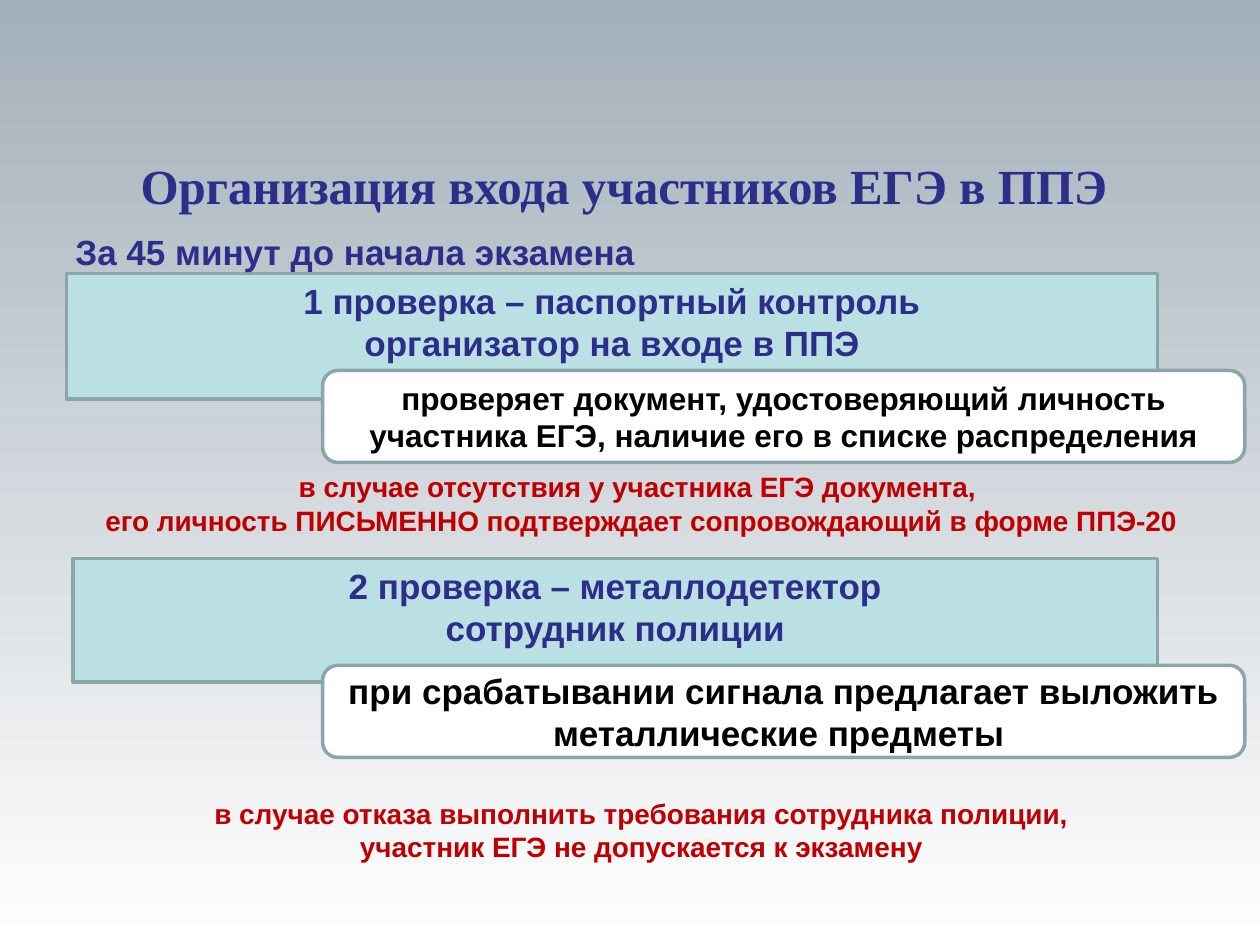
"""Build the slide on admitting exam participants to the test site."""
from typing import NamedTuple, Optional

import pptx
import pptx.dml.color
import pptx.enum.shapes
import pptx.enum.text
import pptx.util

Pt = pptx.util.Pt
Shape = pptx.enum.shapes.MSO_SHAPE
Align = pptx.enum.text.PP_ALIGN
Anchor = pptx.enum.text.MSO_ANCHOR
Fit = pptx.enum.text.MSO_AUTO_SIZE

NAVY, RED, BLACK = "2D2D8A", "C00000", "000000"
WHITE, AQUA, GREY, SLATE = "FFFFFF", "BBE0E3", "8AA6A8", "A3AFB9"


class Label(NamedTuple):
    text: str
    left: float
    top: float
    width: float
    height: float
    size: float
    color: str
    font: str = "Arial"
    align: Align = Align.CENTER
    anchor: Anchor = Anchor.TOP
    pad: float = 3.6
    wrap: bool = True


class Panel(NamedTuple):
    form: Shape
    fill: str
    label: Label


def paint(target, color: str) -> None:
    target.rgb = pptx.dml.color.RGBColor.from_string(color)


def place(label: Label) -> tuple:
    return tuple(Pt(n) for n in (label.left, label.top, label.width, label.height))


def write(shape, label: Label) -> None:
    frame = shape.text_frame
    frame.text = label.text
    frame.word_wrap = label.wrap
    frame.vertical_anchor = label.anchor
    frame.margin_top = frame.margin_bottom = Pt(label.pad)
    if not label.wrap:
        frame.auto_size = Fit.SHAPE_TO_FIT_TEXT
    for para in frame.paragraphs:
        para.alignment = label.align
        for run in para.runs:
            run.font.name = label.font
            run.font.size = Pt(label.size)
            run.font.bold = True
            paint(run.font.color, label.color)


def draw(slide, panel: Panel) -> None:
    shape = slide.shapes.add_shape(panel.form, *place(panel.label))
    shape.shadow.inherit = False
    shape.fill.solid()
    paint(shape.fill.fore_color, panel.fill)
    paint(shape.line.color, GREY)
    shape.line.width = Pt(2)
    write(shape, panel.label)


def check(text: str, left: float, top: float, width: float, height: float) -> Panel:
    return Panel(Shape.RECTANGLE, AQUA, Label(text, left, top, width, height, 20, NAVY))


def note(text: str, top: float, size: float) -> Panel:
    label = Label(text, 184.3, top, 527, 52.6, size, BLACK, anchor=Anchor.MIDDLE)
    return Panel(Shape.ROUNDED_RECTANGLE, WHITE, label)


def alert(text: str, left: float, top: float, width: float) -> Label:
    return Label(text, left, top, width, 46, 16, RED, wrap=False)


PANELS = [
    check("1 проверка – паспортный контроль\nорганизатор на входе в ППЭ",
          38, 156.2, 623.5, 72),
    note("проверяет документ, удостоверяющий личность участника ЕГЭ, "
         "наличие его в списке распределения", 211.7, 18),
    check("2 проверка – металлодетектор\nсотрудник полиции",
          41.6, 319, 620, 70.6),
    note("при срабатывании сигнала предлагает выложить "
         "металлические предметы ", 380.2, 20),
]

LABELS = [
    Label("Организация входа участников ЕГЭ в ППЭ ", 36, 82.8, 648, 39.6, 28, NAVY,
          font="Times New Roman", anchor=Anchor.BOTTOM, pad=0),
    Label("За 45 минут до начала экзамена", 36, 126, 648, 356.4, 20, NAVY,
          align=Align.LEFT, pad=5.6),
    alert("в случае отсутствия у участника ЕГЭ документа, \n"
          "его личность ПИСЬМЕННО подтверждает сопровождающий в форме ППЭ-20",
          49, 265, 635),
    alert("в случае отказа выполнить требования сотрудника полиции,\n"
          "участник ЕГЭ не допускается к экзамену", 112, 451.4, 509),
]


def main() -> None:
    deck = pptx.Presentation()
    deck.slide_width, deck.slide_height = Pt(720), Pt(540)
    slide = deck.slides.add_slide(deck.slide_layouts[6])
    fill = slide.background.fill
    fill.gradient()
    fill.gradient_angle = 90
    for stop, color, spot in zip(fill.gradient_stops, (WHITE, SLATE), (0, 1)):
        paint(stop.color, color)
        stop.position = spot
    for panel in PANELS:
        draw(slide, panel)
    for label in LABELS:
        write(slide.shapes.add_textbox(*place(label)), label)
    deck.save("out.pptx")


if __name__ == "__main__":
    main()
